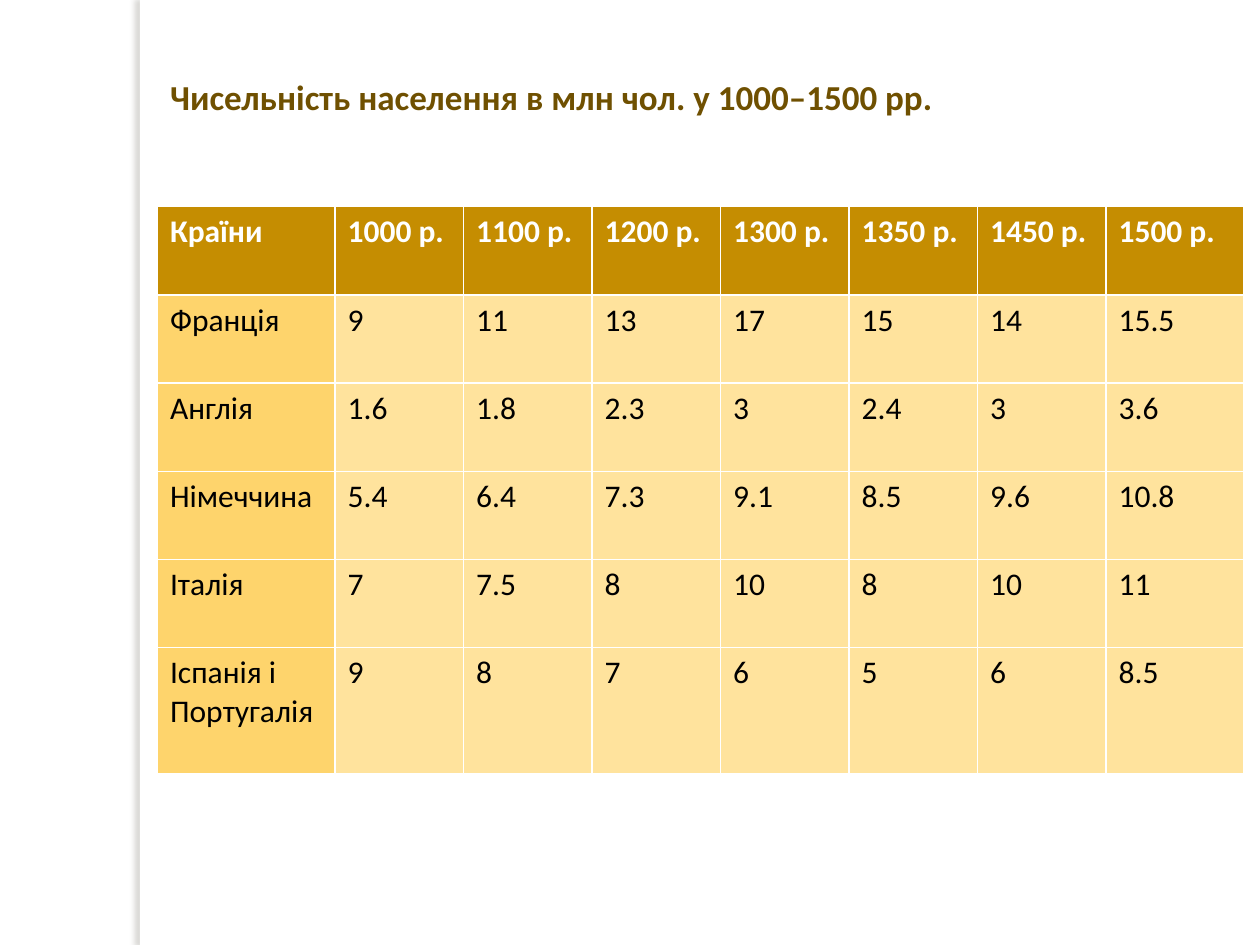
from lxml import etree
from pptx import Presentation
from pptx.dml.color import RGBColor
from pptx.enum.shapes import MSO_SHAPE
from pptx.enum.text import MSO_ANCHOR, MSO_AUTO_SIZE, PP_ALIGN
from pptx.oxml import parse_xml
from pptx.util import Inches, Pt

RECTANGLE = MSO_SHAPE.RECTANGLE
TOP = MSO_ANCHOR.TOP
LEFT = PP_ALIGN.LEFT
NO_AUTOFIT = MSO_AUTO_SIZE.NONE
TITLE_ONLY = 5

FONT = "Calibri"
CONTENT_LEFT = 1.25
COLUMN_WIDTHS = [1.41] + [1.02] * 6 + [1.09]
ROW_HEIGHTS = [0.7] * 5 + [1.0]

YEARS = [1000, 1100, 1200, 1300, 1350, 1450, 1500]
POPULATION = {
    "Франція": [9, 11, 13, 17, 15, 14, 15.5],
    "Англія": [1.6, 1.8, 2.3, 3, 2.4, 3, 3.6],
    "Німеччина": [5.4, 6.4, 7.3, 9.1, 8.5, 9.6, 10.8],
    "Італія": [7, 7.5, 8, 10, 8, 10, 11],
    "Іспанія і Португалія": [9, 8, 7, 6, 5, 6, 8.5],
}

SIDE_SHADOW = """
<a:effectLst xmlns:a="http://schemas.openxmlformats.org/drawingml/2006/main">
  <a:outerShdw blurRad="38100" dist="38100" dir="10800000" algn="tl" rotWithShape="0">
    <a:srgbClr val="736F63"><a:alpha val="25000"/></a:srgbClr>
  </a:outerShdw>
</a:effectLst>"""


def color(hex_code):
    return RGBColor.from_string(hex_code)


def paint(target, hex_code):
    target.fill.solid()
    target.fill.fore_color.rgb = color(hex_code)


def style_text(paragraph, size, hex_code, bold):
    paragraph.alignment = LEFT
    font = paragraph.font
    font.name = FONT
    font.size = Pt(size)
    font.bold = bold
    font.color.rgb = color(hex_code)


def add_side_strip(slide, slide_height):
    """Add the white full-height strip that casts a shadow to its left."""
    strip = slide.shapes.add_shape(RECTANGLE, Inches(1.11), 0, Inches(0.08), slide_height)
    paint(strip, "FFFFFF")
    strip.line.fill.background()
    properties = strip.fill._xPr
    properties.append(parse_xml(etree.tostring(etree.fromstring(SIDE_SHADOW))))


def set_title(slide, text):
    title = slide.shapes.title
    title.left, title.top = Inches(CONTENT_LEFT), Inches(0.55)
    title.width, title.height = Inches(6.33), Inches(0.74)
    frame = title.text_frame
    frame.text = text
    frame.auto_size = NO_AUTOFIT
    frame.vertical_anchor = TOP
    style_text(frame.paragraphs[0], 20, "6F5001", True)


def fill_cell(cell, text, background, ink, bold):
    cell.text = text
    paint(cell, background)
    style_text(cell.text_frame.paragraphs[0], 18, ink, bold)


def add_population_table(slide):
    header = ["Країни"] + [f"{year} р." for year in YEARS]
    rows = [header] + [[country, *values] for country, values in POPULATION.items()]
    table = slide.shapes.add_table(
        len(rows), len(header), Inches(CONTENT_LEFT), Inches(1.64),
        Inches(sum(COLUMN_WIDTHS)), Inches(sum(ROW_HEIGHTS))).table
    table.horz_banding = False

    for column, width in zip(table.columns, COLUMN_WIDTHS):
        column.width = Inches(width)
    for row, height in zip(table.rows, ROW_HEIGHTS):
        row.height = Inches(height)

    for r, values in enumerate(rows):
        for c, value in enumerate(values):
            if r == 0:
                look = ("C58D01", "FFFFFF", True)
            else:
                look = ("FED46C" if c == 0 else "FFE39D", "000000", False)
            fill_cell(table.cell(r, c), str(value), *look)


def main():
    presentation = Presentation()
    presentation.slide_width, presentation.slide_height = Inches(10), Inches(7.5)
    slide = presentation.slides.add_slide(presentation.slide_layouts[TITLE_ONLY])
    add_side_strip(slide, presentation.slide_height)
    set_title(slide, "Чисельність населення в млн чол. у 1000–1500 рр.")
    add_population_table(slide)
    presentation.save("out.pptx")


if __name__ == "__main__":
    main()
